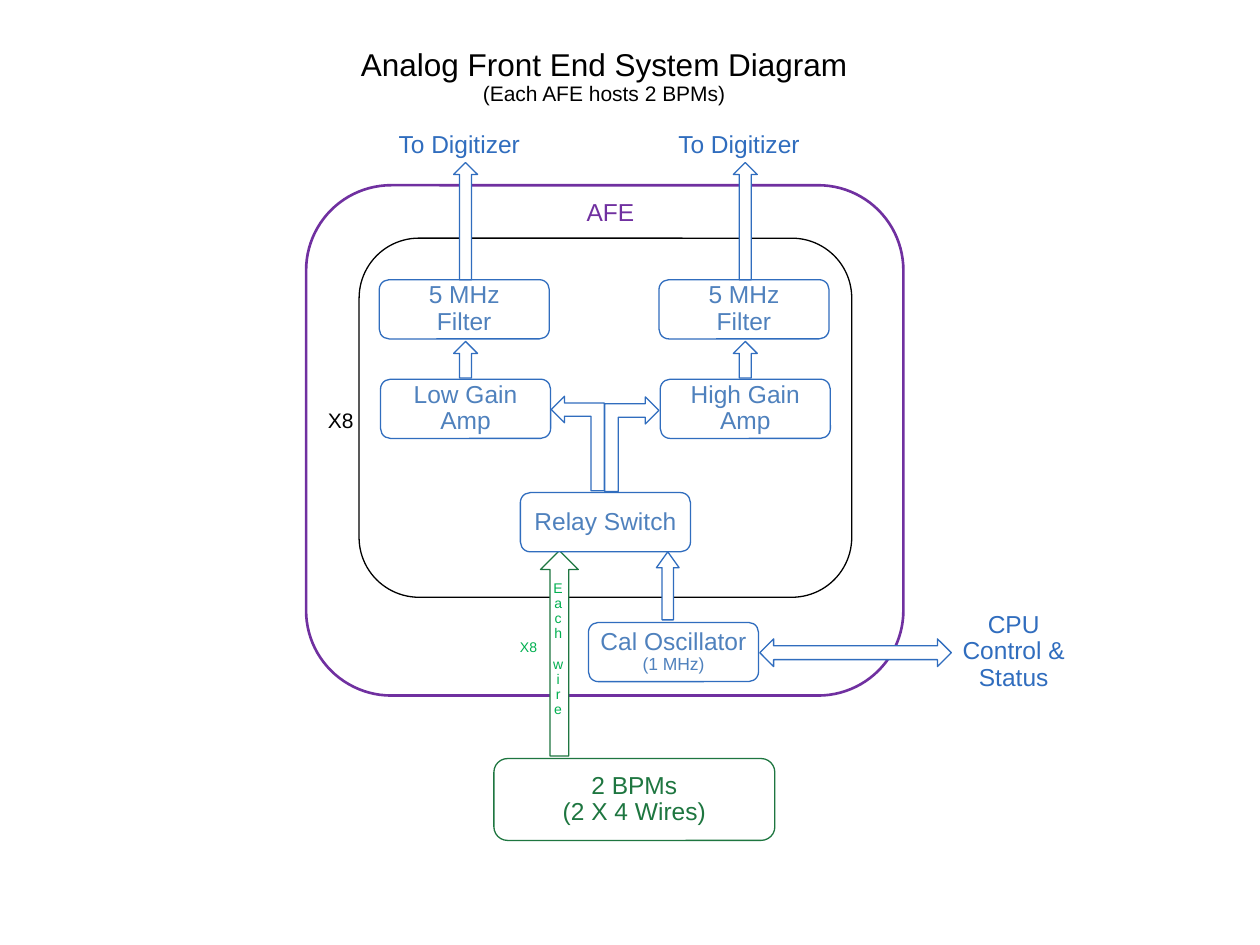
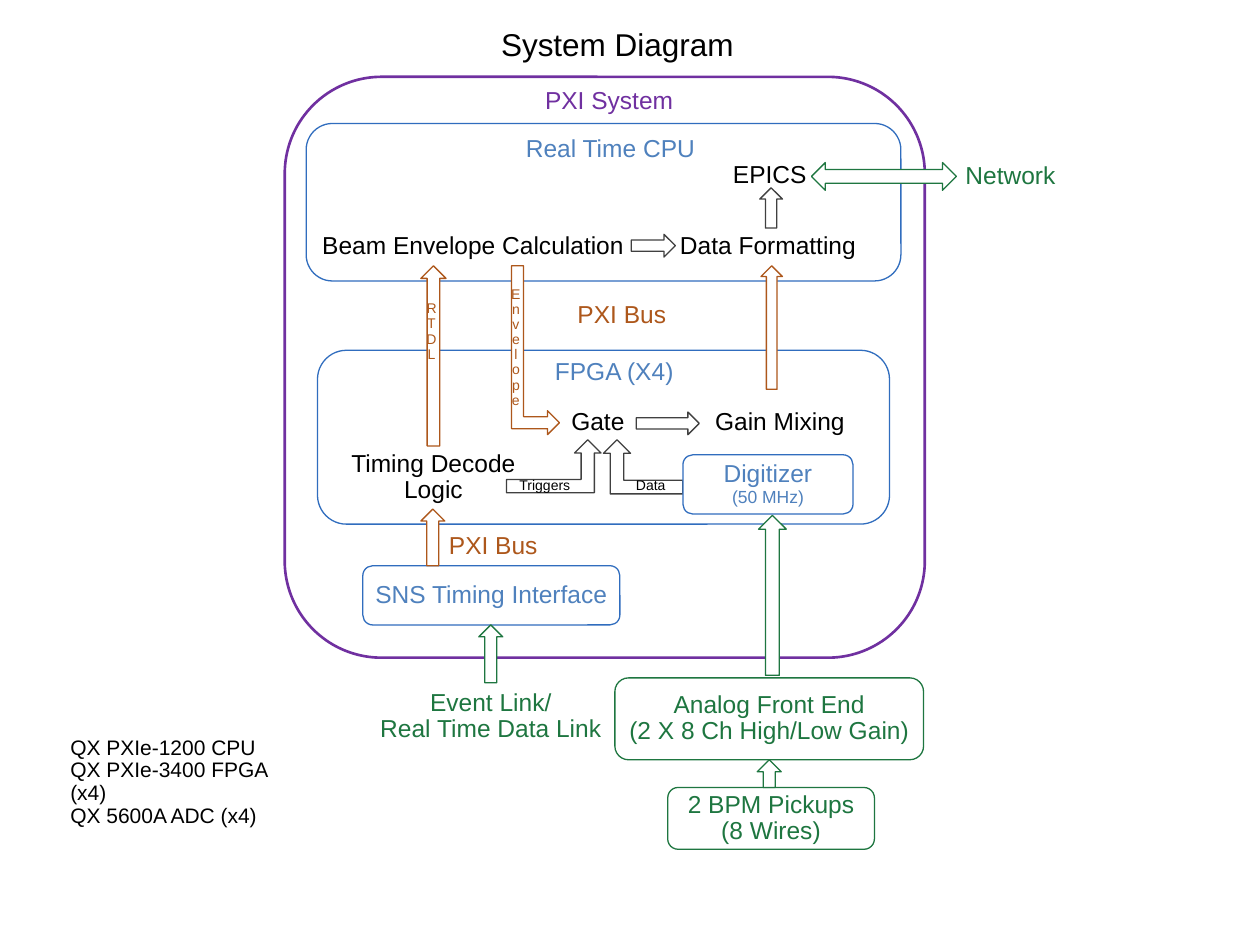
from dataclasses import dataclass

from pptx import Presentation
from pptx.dml.color import RGBColor
from pptx.enum import shapes as es, text as et
from pptx.util import Inches, Pt

FONT = "Arial"
INK = {
    "white": "FFFFFF",
    "black": "000000",
    "gray": "404040",
    "purple": "7030A0",
    "blue": "306DBE",
    "soft": "4F81BD",
    "green": "1E7640",
    "lime": "00B050",
    "rust": "AD571B",
}
KIND = es.MSO_SHAPE
UP, BENT = KIND.UP_ARROW, KIND.BENT_UP_ARROW
RIGHT, BOTH = KIND.RIGHT_ARROW, KIND.LEFT_RIGHT_ARROW
NODE_W, NODE_H = 1.35, 0.47


@dataclass
class Box:
    x: float
    y: float
    w: float
    h: float
    ink: str = "blue"
    words: str = ""
    tail: int = 14
    width: float = 0.75


@dataclass
class Arrow:
    kind: KIND
    x: float
    y: float
    w: float
    h: float
    ink: str
    turn: int = 0
    flip: bool = False
    head: float = 0.5


@dataclass
class Label:
    x: float
    y: float
    w: float
    h: float
    ink: str
    words: str
    size: int = 14
    tail: int = 0
    wrap: bool = True
    tall: bool = False
    middle: bool = False
    left: bool = False


def color(name: str) -> RGBColor:
    return RGBColor.from_string(INK[name])


def write(frame, words: str, ink: str, size: int, tail: int, left: bool = False) -> None:
    frame.text = words
    for rank, para in enumerate(frame.paragraphs):
        para.alignment = et.PP_ALIGN.LEFT if left else et.PP_ALIGN.CENTER
        para.line_spacing = 0.9
        for run in para.runs:
            run.font.name = FONT
            run.font.size = Pt(tail if rank else size)
            run.font.color.rgb = color(ink)


def draw_shape(slide, kind: KIND, part, width: float):
    shape = slide.shapes.add_shape(
        kind, Inches(part.x), Inches(part.y), Inches(part.w), Inches(part.h)
    )
    shape.shadow.inherit = False
    shape.fill.solid()
    shape.fill.fore_color.rgb = color("white")
    shape.line.color.rgb = color(part.ink)
    shape.line.width = Pt(width)
    return shape


def draw_box(slide, box: Box) -> None:
    shape = draw_shape(slide, KIND.ROUNDED_RECTANGLE, box, box.width)
    if box.words:
        frame = shape.text_frame
        frame.word_wrap = True
        frame.vertical_anchor = et.MSO_ANCHOR.MIDDLE
        frame.margin_left = frame.margin_right = Inches(0.05)
        frame.margin_top = frame.margin_bottom = Inches(0.05)
        write(frame, box.words, "soft" if box.ink == "blue" else box.ink, 14, box.tail)


def draw_arrow(slide, arrow: Arrow) -> None:
    shape = draw_shape(slide, arrow.kind, arrow, 0.75)
    shape.rotation = arrow.turn
    if arrow.flip:
        shape.element.spPr.xfrm.set("flipH", "1")
    if arrow.head != 0.5:
        shape.adjustments[1] = arrow.head


def draw_label(slide, label: Label) -> None:
    shape = slide.shapes.add_textbox(
        Inches(label.x), Inches(label.y), Inches(label.w), Inches(label.h)
    )
    frame = shape.text_frame
    frame.word_wrap = label.wrap
    frame.auto_size = et.MSO_AUTO_SIZE.SHAPE_TO_FIT_TEXT
    if label.middle:
        frame.vertical_anchor = et.MSO_ANCHOR.MIDDLE
    if label.tall:
        shape.element.txBody.bodyPr.set("vert", "wordArtVert")
    write(frame, label.words, label.ink, label.size, label.tail or label.size, label.left)


def node(x: float, y: float, words: str, tail: int = 14) -> Box:
    return Box(x, y, NODE_W, NODE_H, "blue", words, tail)


def draw(deck, parts: list) -> None:
    slide = deck.slides.add_slide(deck.slide_layouts[6])
    tools = {Box: draw_box, Arrow: draw_arrow, Label: draw_label}
    for part in parts:
        tools[type(part)](slide, part)


def front_end() -> list:
    parts = [
        Box(2.43, 1.47, 4.74, 4.05, "purple", width=1.5),
        Box(2.85, 1.89, 3.91, 2.85, "black"),
        Arrow(UP, 4.29, 4.37, 0.3, 1.63, "green"),
        Arrow(BENT, 4.64, 3.31, 0.75, 0.43, "blue", 90, True),
        Arrow(BENT, 4.21, 3.31, 0.75, 0.42, "blue", 270),
        Arrow(UP, 5.21, 4.38, 0.18, 0.54, "blue", head=0.7),
        Arrow(BOTH, 6.03, 5.07, 1.52, 0.22, "blue"),
        Box(3.92, 6.02, 2.23, 0.65, "green", "2 BPMs\n(2 X 4 Wires)"),
        node(4.13, 3.91, "Relay Switch"),
        node(4.67, 4.94, "Cal Oscillator\n(1 MHz)", 10),
    ]
    for x, gain in ((3.01, "Low"), (5.23, "High")):
        parts += [
            node(x + 0.01, 3.01, f"{gain} Gain\nAmp"),
            node(x, 2.22, "5 MHz\nFilter"),
            Arrow(UP, x + 0.59, 1.29, 0.19, 0.93, "blue"),
            Arrow(UP, x + 0.59, 2.71, 0.19, 0.29, "blue"),
            Label(x + 0.01, 1, 1.25, 0.31, "blue", "To Digitizer"),
        ]
    return parts + [
        Label(2.44, 0.34, 4.71, 0.56, "black",
              "Analog Front End System Diagram\n(Each AFE hosts 2 BPMs)", 18, 12),
        Label(4.26, 4.4, 0.34, 1.51, "lime", "Each wire", 8, tall=True, middle=True),
        Label(3.96, 5.03, 0.47, 0.22, "lime", "X8", 8),
        Label(2.47, 3.21, 0.47, 0.28, "black", "X8", 12),
        Label(4.29, 1.54, 1.11, 0.31, "purple", "AFE"),
        Label(7.42, 4.81, 1.25, 0.74, "blue", "CPU Control & Status"),
    ]


def system() -> list:
    return [
        Box(2.26, 0.61, 5.08, 4.61, "purple", width=1.5),
        Box(2.43, 0.98, 4.72, 1.25),
        Box(2.52, 2.78, 4.54, 1.38),
        Box(2.88, 4.49, 2.04, 0.47, "blue", "SNS Timing Interface"),
        Box(4.88, 5.38, 2.45, 0.65, "green", "Analog Front End\n(2 X 8 Ch High/Low Gain)"),
        Box(5.3, 6.25, 1.64, 0.49, "green", "2 BPM Pickups\n(8 Wires)"),
        Arrow(UP, 3.8, 4.96, 0.19, 0.46, "green"),
        Arrow(UP, 6.01, 6.03, 0.19, 0.22, "green"),
        Arrow(UP, 6.02, 4.09, 0.22, 1.27, "green"),
        Arrow(BOTH, 6.44, 1.29, 1.15, 0.22, "green"),
        Arrow(UP, 3.34, 4.04, 0.19, 0.45, "rust"),
        Arrow(UP, 6.04, 2.11, 0.17, 0.98, "rust"),
        Arrow(UP, 3.34, 2.11, 0.2, 1.43, "rust"),
        Arrow(BENT, 3.58, 2.59, 1.34, 0.38, "rust", 90),
        Arrow(BENT, 4.79, 3.49, 0.63, 0.43, "gray", flip=True),
        Arrow(BENT, 4.02, 3.49, 0.75, 0.42, "gray"),
        Arrow(RIGHT, 5.05, 3.27, 0.5, 0.18, "gray"),
        Arrow(RIGHT, 5.01, 1.86, 0.35, 0.18, "gray"),
        Arrow(UP, 6.03, 1.49, 0.18, 0.32, "gray"),
        node(5.42, 3.61, "Digitizer\n(50 MHz)", 10),
        Label(3.64, 0.18, 2.52, 0.37, "black", "System Diagram", 18),
        Label(4.22, 0.65, 1.23, 0.31, "purple", "PXI System", wrap=False),
        Label(4.07, 1.03, 1.55, 0.31, "soft", "Real Time CPU", wrap=False),
        Label(4.3, 2.8, 1.15, 0.31, "soft", "FPGA (X4)", wrap=False),
        Label(3.32, 4.18, 1.19, 0.31, "rust", "PXI Bus"),
        Label(4.34, 2.35, 1.19, 0.31, "rust", "PXI Bus"),
        Label(2.65, 3.53, 1.58, 0.53, "black", "Timing Decode\nLogic"),
        Label(2.9, 5.43, 1.99, 0.53, "green", "Event Link/\nReal Time Data Link"),
        Label(4.25, 3.2, 0.99, 0.31, "black", "Gate"),
        Label(5.54, 3.2, 1.3, 0.31, "black", "Gain Mixing"),
        Label(2.42, 1.8, 2.67, 0.31, "black", "Beam Envelope Calculation"),
        Label(5.1, 1.8, 1.99, 0.31, "black", "Data Formatting"),
        Label(5.61, 1.24, 1, 0.31, "black", "EPICS"),
        Label(7.42, 1.25, 1.2, 0.31, "green", "Network"),
        Label(3.26, 2.16, 0.33, 0.95, "rust", "RTDL", 8, tall=True),
        Label(3.93, 2.1, 0.33, 1.32, "rust", "Envelope", 8, tall=True),
        Label(4.01, 3.75, 0.63, 0.22, "black", "Triggers", 8),
        Label(4.85, 3.75, 0.63, 0.22, "black", "Data", 8),
        Label(0.46, 5.8, 2.04, 0.65, "black",
              "QX PXIe-1200 CPU\nQX PXIe-3400 FPGA (x4)\nQX 5600A ADC (x4)",
              12, wrap=False, left=True),
    ]


def main() -> None:
    deck = Presentation()
    deck.slide_width = Inches(10)
    deck.slide_height = Inches(7.5)
    draw(deck, front_end())
    draw(deck, system())
    deck.save("out.pptx")


if __name__ == "__main__":
    main()
